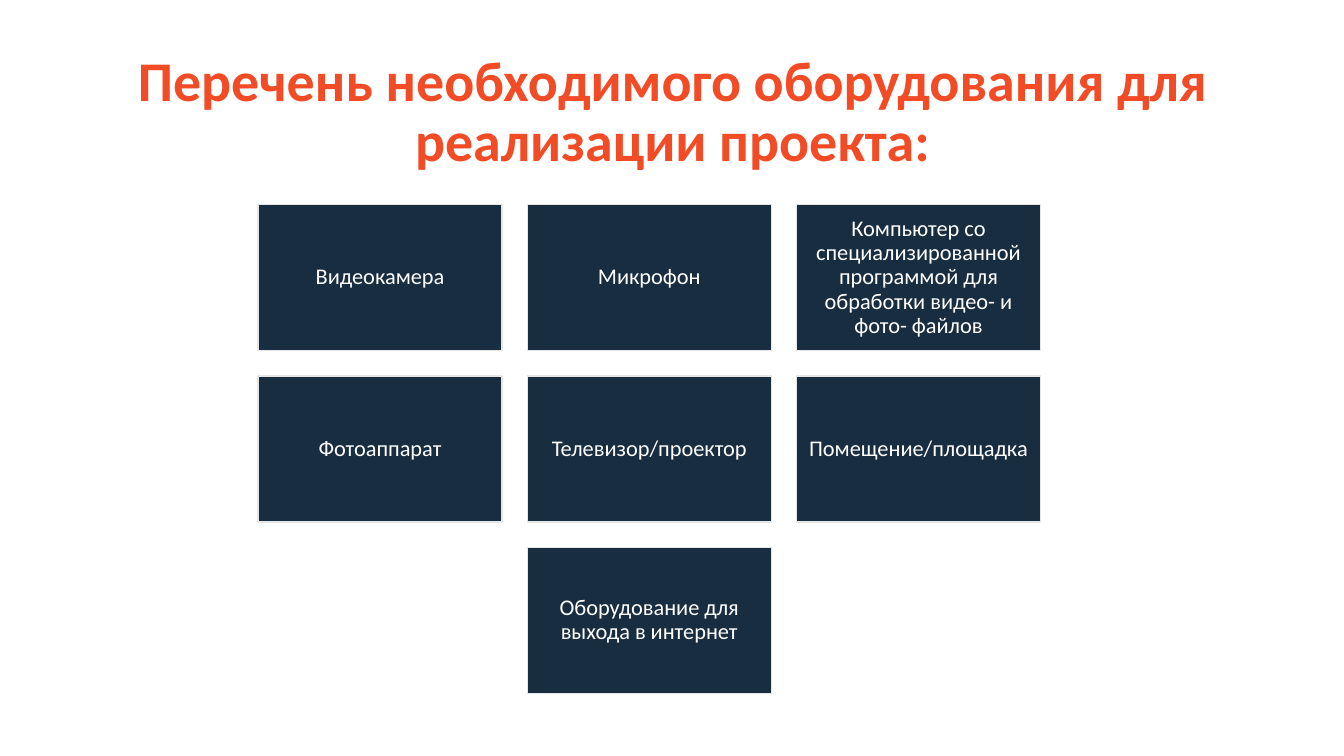
"""Build a slide listing the equipment a project needs."""
import pptx
import pptx.dml.color
import pptx.enum.shapes
import pptx.enum.text
import pptx.util

Inches = pptx.util.Inches


def colour(value):
    """Return the colour for a hex string."""
    return pptx.dml.color.RGBColor.from_string(value)


class EquipmentSlide:
    """Hold the style and the current slide."""

    font_name = "Calibri"
    title_colour = "F24C27"
    card_fill = "182D40"
    card_line = "E7E6E6"
    card_text = "FFFFFF"
    card_width, card_height = 2.42, 1.45

    def __init__(self, presentation):
        """Add a title-only slide."""
        self.slide = presentation.slides.add_slide(presentation.slide_layouts[5])

    def add_label(self, shape, text, size, text_colour, bold=False):
        """Put one centred paragraph into a shape."""
        frame = shape.text_frame
        frame.word_wrap = True
        frame.auto_size = pptx.enum.text.MSO_AUTO_SIZE.NONE
        frame.vertical_anchor = pptx.enum.text.MSO_ANCHOR.MIDDLE
        paragraph = frame.paragraphs[0]
        paragraph.alignment = pptx.enum.text.PP_ALIGN.CENTER
        paragraph.line_spacing = 0.9
        paragraph.space_before = pptx.util.Pt(0)
        run = paragraph.add_run()
        run.text = text
        run.font.name = self.font_name
        run.font.size = pptx.util.Pt(size)
        run.font.bold = bold
        run.font.color.rgb = colour(text_colour)

    def title(self, text):
        """Place and fill the title."""
        shape = self.slide.shapes.title
        shape.left, shape.top = Inches(0.92), Inches(0.4)
        shape.width, shape.height = Inches(11.5), Inches(1.45)
        self.add_label(shape, text, 40, self.title_colour, bold=True)

    def card(self, left, top, text):
        """Add one labelled card."""
        shape = self.slide.shapes.add_shape(
            pptx.enum.shapes.MSO_SHAPE.RECTANGLE,
            Inches(left), Inches(top),
            Inches(self.card_width), Inches(self.card_height))
        shape.shadow.inherit = False
        shape.fill.solid()
        shape.fill.fore_color.rgb = colour(self.card_fill)
        shape.line.color.rgb = colour(self.card_line)
        shape.line.width = pptx.util.Pt(1)
        frame = shape.text_frame
        frame.margin_left = frame.margin_right = Inches(0.07)
        frame.margin_top = frame.margin_bottom = Inches(0.07)
        self.add_label(shape, text, 16, self.card_text)

    def card_rows(self, centre, top, gap, rows):
        """Lay out rows of cards, each centred on the same axis."""
        for row_index, row in enumerate(rows):
            row_width = len(row) * (self.card_width + gap) - gap
            for column_index, text in enumerate(row):
                self.card(centre - row_width / 2 + column_index * (self.card_width + gap),
                          top + row_index * (self.card_height + gap), text)


def main():
    """Build and save the presentation."""
    presentation = pptx.Presentation()
    presentation.slide_width = Inches(13.33)
    presentation.slide_height = Inches(7.5)
    equipment = EquipmentSlide(presentation)
    equipment.title("Перечень необходимого оборудования для реализации проекта:")
    equipment.card_rows(6.44, 2.03, 0.25, [
        ["Видеокамера", "Микрофон",
         "Компьютер со специализированной программой для обработки видео- и фото- файлов"],
        ["Фотоаппарат", "Телевизор/проектор", "Помещение/площадка"],
        ["Оборудование для выхода в интернет"],
    ])
    presentation.save("out.pptx")


if __name__ == "__main__":
    main()
